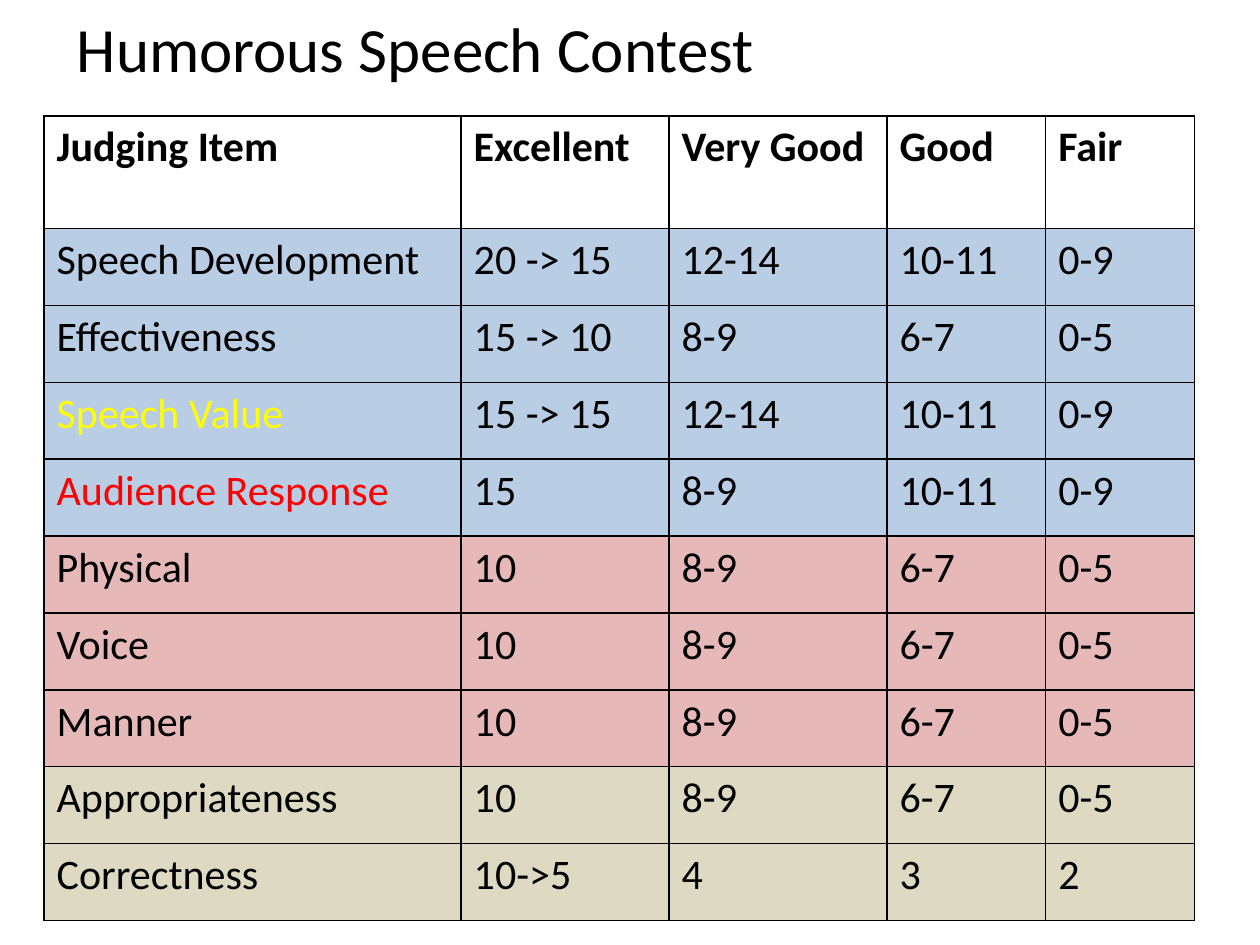
from lxml.etree import SubElement as add_element
from pptx import Presentation
from pptx.dml.color import RGBColor
from pptx.enum.text import MSO_ANCHOR as Anchor, PP_ALIGN as Align
from pptx.oxml.ns import qn
from pptx.util import Inches, Pt

WIDTH, HEIGHT = 10, 7.5
BLACK, YELLOW, RED = "000000", "FFFF00", "FF0000"
BLUE, PINK, TAN = "B9CDE5", "E6B9B8", "DDD9C3"

HEADINGS = ("Judging Item", "Excellent", "Very Good", "Good", "Fair")
GROUPS = (
    (BLUE, (
        ("Speech Development", "20 -> 15", "12-14", "10-11", "0-9"),
        ("Effectiveness", "15 -> 10", "8-9", "6-7", "0-5"),
        ("Speech Value", "15 -> 15", "12-14", "10-11", "0-9"),
        ("Audience Response", "15", "8-9", "10-11", "0-9"),
    )),
    (PINK, tuple((item, "10", "8-9", "6-7", "0-5") for item in ("Physical", "Voice", "Manner"))),
    (TAN, (
        ("Appropriateness", "10", "8-9", "6-7", "0-5"),
        ("Correctness", "10->5", "4", "3", "2"),
    )),
)
ITEM_COLORS = {"Speech Value": YELLOW, "Audience Response": RED}


def color(hex_text):
    """Return the colour for a hex string."""
    return RGBColor.from_string(hex_text)


class ScoreSheet:
    """Hold the style and the current slide."""

    font_name = "Calibri"
    title_size = 36
    cell_size = 24
    border_width = 1

    def __init__(self, deck):
        """Add a title-only slide to the deck."""
        self.slide = deck.slides.add_slide(deck.slide_layouts[5])

    def place(self, left, top, width, height):
        """Turn percentages of the slide into lengths."""
        return (Inches(left * WIDTH / 100), Inches(top * HEIGHT / 100),
                Inches(width * WIDTH / 100), Inches(height * HEIGHT / 100))

    def add_text(self, para, text, size, hex_text=BLACK, bold=False):
        """Add one styled run to a paragraph."""
        para.alignment = Align.LEFT
        span = para.add_run()
        span.text = text
        span.font.name = self.font_name
        span.font.size = Pt(size)
        span.font.bold = bold
        span.font.color.rgb = color(hex_text)

    def title(self, text, *shares):
        """Move and fill the title placeholder."""
        box = self.slide.shapes.title
        box.left, box.top, box.width, box.height = self.place(*shares)
        box.text_frame.vertical_anchor = Anchor.MIDDLE
        self.add_text(box.text_frame.paragraphs[0], text, self.title_size)

    def border(self, cell):
        """Draw a black line on each side of a cell."""
        properties = cell._tc.get_or_add_tcPr()
        for side in ("a:lnL", "a:lnR", "a:lnT", "a:lnB"):
            line = add_element(properties, qn(side), w=str(Pt(self.border_width)))
            fill = add_element(line, qn("a:solidFill"))
            add_element(fill, qn("a:srgbClr"), val=BLACK)

    def cell(self, cell, text, fill=None, hex_text=BLACK, bold=False):
        """Border, fill and label one cell."""
        self.border(cell)
        if fill:
            cell.fill.solid()
            cell.fill.fore_color.rgb = color(fill)
        else:
            cell.fill.background()
        self.add_text(cell.text_frame.paragraphs[0], text, self.cell_size, hex_text, bold)

    def table(self, headings, groups, column_shares, header_share, *shares):
        """Add the score table with one fill for each group of rows."""
        rows = [(fill, row) for fill, members in groups for row in members]
        left, top, width, height = self.place(*shares)
        table = self.slide.shapes.add_table(
            len(rows) + 1, len(headings), left, top, width, height).table
        table.first_row = table.horz_banding = False
        for column, share in zip(table.columns, column_shares):
            column.width = int(width * share / sum(column_shares))
        header_height = int(height * header_share)
        for row in table.rows:
            row.height = (height - header_height) // len(rows)
        table.rows[0].height = header_height
        for index, text in enumerate(headings):
            self.cell(table.cell(0, index), text, bold=True)
        for number, (fill, row) in enumerate(rows, 1):
            for index, text in enumerate(row):
                self.cell(table.cell(number, index), text, fill, ITEM_COLORS.get(text, BLACK))


def main():
    """Build and save the deck."""
    deck = Presentation()
    deck.slide_width, deck.slide_height = Inches(WIDTH), Inches(HEIGHT)
    sheet = ScoreSheet(deck)
    sheet.title("Humorous Speech Contest", 5.1, 0.3, 90, 9.5)
    sheet.table(HEADINGS, GROUPS, (3.31, 1.65, 1.73, 1.26, 1.18), 0.14,
                3.5, 12.25, 91.3, 85.2)
    deck.save("out.pptx")


if __name__ == "__main__":
    main()
